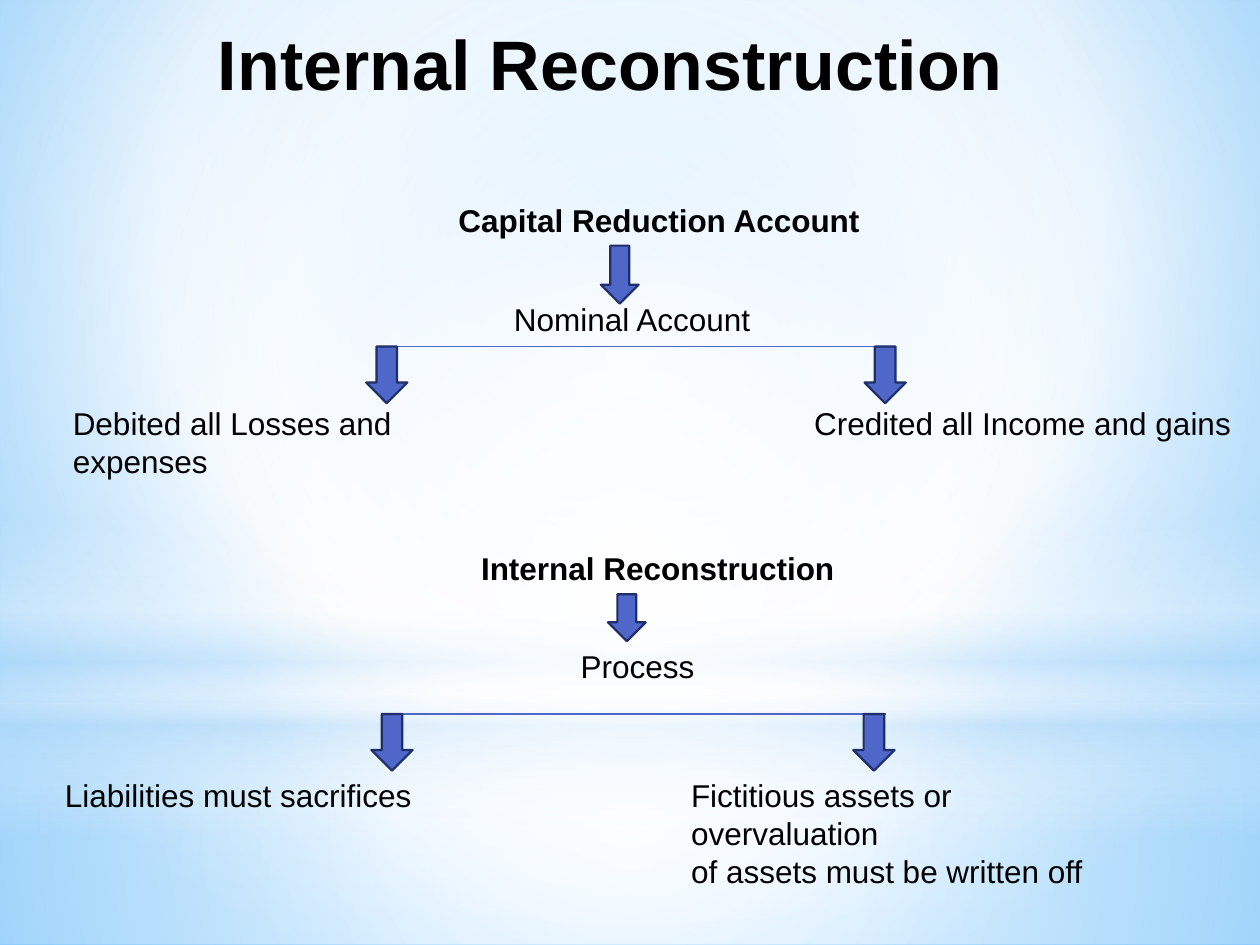
from lxml import etree
from pptx import Presentation
from pptx import util as u
from pptx.dml.color import RGBColor
from pptx.enum import shapes, text
from pptx.oxml.ns import qn

Pt = u.Pt
COLORS = {"ink": "000000", "arrow": "4E67C8", "edge": "1F2E69", "white": "FFFFFF",
          "pale": "B4DCFA", "sky": "9ED5FF", "blue": "5BB9FF"}
FONT = "Arial"
TITLE = "Internal Reconstruction"

# Gradient stops: position, colour, opacity (all in percent)
BACKGROUND = [(0, "sky", 100), (60, "white", 100), (100, "blue", 100)]
CENTER = (50, 50, 50, 50)
# Layers: preset, (left, top, width, height), stops, focus (None for a vertical gradient)
LAYERS = [
    ("RECTANGLE", (0, 402, 720, 138),
     [(0, "white", 91), (37, "white", 76), (100, "pale", 79)], CENTER),
    ("RECTANGLE", (0, 0, 720, 402),
     [(0, "white", 89), (48, "white", 62), (100, "pale", 79)], CENTER),
    ("RECTANGLE", (0, 297, 720, 180),
     [(0, "white", 0), (29, "white", 30), (45, "pale", 40), (55, "white", 26),
      (65, "pale", 60), (100, "white", 0)], None),
    ("OVAL", (0, 126, 720, 402), [(0, "white", 100), (56, "white", 0)], CENTER),
]

# Texts: (lines, left, top); stem: centre x, top, height;
# branch: top, line start, line end, arrow centres
TREES = [
    {"heading": (["Capital Reduction Account"], 254.9, 111.6),
     "stem": (354.2, 140.4, 33.1),
     "middle": (["Nominal Account"], 286.6, 167.8),
     "branch": (198, 217.4, 506.9, (221, 505.8)),
     "leaves": [(["Debited all Losses and expenses"], 34.5, 227.5),
                (["Credited all Income and gains"], 458.2, 227.5)]},
    {"heading": (["Internal Reconstruction"], 267.8, 310.3),
     "stem": (358.2, 339.6, 26.8),
     "middle": (["Process"], 324.7, 366.2),
     "branch": (408, 223.2, 506.2, (224, 499.4)),
     "leaves": [(["Liabilities must sacrifices"], 30, 440),
                (["Fictitious assets or overvaluation",
                  "of assets must be written off"], 387.8, 440)]},
]
STEM_WIDTH, BRANCH_WIDTH, BRANCH_HEIGHT = 21.6, 23.6, 32.4
LINE_HEIGHT, BOX_WIDTH = 21.6, 262


def rgb(name):
    return RGBColor.from_string(COLORS[name])


def paint_gradient(fill, owner, stops, focus):
    """Swap the fill's solid colour, found inside owner, for a gradient."""
    fill.solid()
    fill.fore_color.rgb = rgb("white")
    solid = owner.find(".//" + qn("a:solidFill"))
    gradient = etree.Element(qn("a:gradFill"), rotWithShape="1")
    stop_list = etree.SubElement(gradient, qn("a:gsLst"))
    for position, color, opacity in stops:
        stop = etree.SubElement(stop_list, qn("a:gs"), pos=str(position * 1000))
        shade = etree.SubElement(stop, qn("a:srgbClr"), val=COLORS[color])
        if opacity < 100:
            etree.SubElement(shade, qn("a:alpha"), val=str(opacity * 1000))
    if focus:
        circle = etree.SubElement(gradient, qn("a:path"), path="circle")
        sides = {side: str(value * 1000) for side, value in zip("ltrb", focus)}
        etree.SubElement(circle, qn("a:fillToRect"), sides)
    else:
        etree.SubElement(gradient, qn("a:lin"), ang="5400000", scaled="0")
    solid.getparent().replace(solid, gradient)


def write(frame, lines, size=18, bold=False, align=text.PP_ALIGN.LEFT):
    frame.vertical_anchor = text.MSO_ANCHOR.TOP
    for index, line in enumerate(lines):
        para = frame.add_paragraph() if index else frame.paragraphs[0]
        para.alignment = align
        span = para.add_run()
        span.text = line
        span.font.name, span.font.size, span.font.bold = FONT, Pt(size), bold
        span.font.color.rgb = rgb("ink")


def add_label(page, label, bold=False):
    lines, left, top = label
    box = page.shapes.add_textbox(Pt(left), Pt(top), Pt(BOX_WIDTH),
                                  Pt(7.2 + LINE_HEIGHT * len(lines)))
    box.text_frame.word_wrap = True
    write(box.text_frame, lines, bold=bold)


def add_arrow(page, center, top, width, height):
    arrow = page.shapes.add_shape(shapes.MSO_SHAPE.DOWN_ARROW, Pt(center - width / 2),
                                  Pt(top), Pt(width), Pt(height))
    arrow.shadow.inherit = False
    arrow.fill.solid()
    arrow.fill.fore_color.rgb = rgb("arrow")
    arrow.line.color.rgb = rgb("edge")
    arrow.line.width = Pt(1.25)


def add_line(page, start, end, y):
    line = page.shapes.add_connector(shapes.MSO_CONNECTOR.STRAIGHT,
                                     Pt(start), Pt(y), Pt(end), Pt(y))
    line.line.color.rgb = rgb("arrow")
    line.line.width = Pt(0.75)
    etree.SubElement(line._element.spPr, qn("a:effectLst"))


def add_tree(page, tree):
    top, start, end, centers = tree["branch"]
    add_line(page, start, end, top)
    for center in centers:
        add_arrow(page, center, top, BRANCH_WIDTH, BRANCH_HEIGHT)
    center, top, height = tree["stem"]
    add_arrow(page, center, top, STEM_WIDTH, height)
    add_label(page, tree["heading"], bold=True)
    for label in [tree["middle"], *tree["leaves"]]:
        add_label(page, label)


def main():
    deck = Presentation()
    deck.slide_width, deck.slide_height = Pt(720), Pt(540)
    page = deck.slides.add_slide(deck.slide_layouts[5])
    paint_gradient(page.background.fill, page._element, BACKGROUND, (20, 10, 20, 60))
    for preset, bounds, stops, focus in LAYERS:
        layer = page.shapes.add_shape(getattr(shapes.MSO_SHAPE, preset), *map(Pt, bounds))
        layer.shadow.inherit = False
        layer.line.fill.background()
        paint_gradient(layer.fill, layer._element, stops, focus)

    title = page.shapes.title
    title.left, title.top, title.width, title.height = map(Pt, (8.6, 4.3, 680.4, 84.2))
    title.text_frame.margin_top = Pt(7.2)
    write(title.text_frame, [TITLE], size=40, bold=True, align=text.PP_ALIGN.CENTER)
    page.shapes._spTree.append(title._element)  # bring in front of the layers

    for tree in TREES:
        add_tree(page, tree)
    deck.save("out.pptx")


if __name__ == "__main__":
    main()
